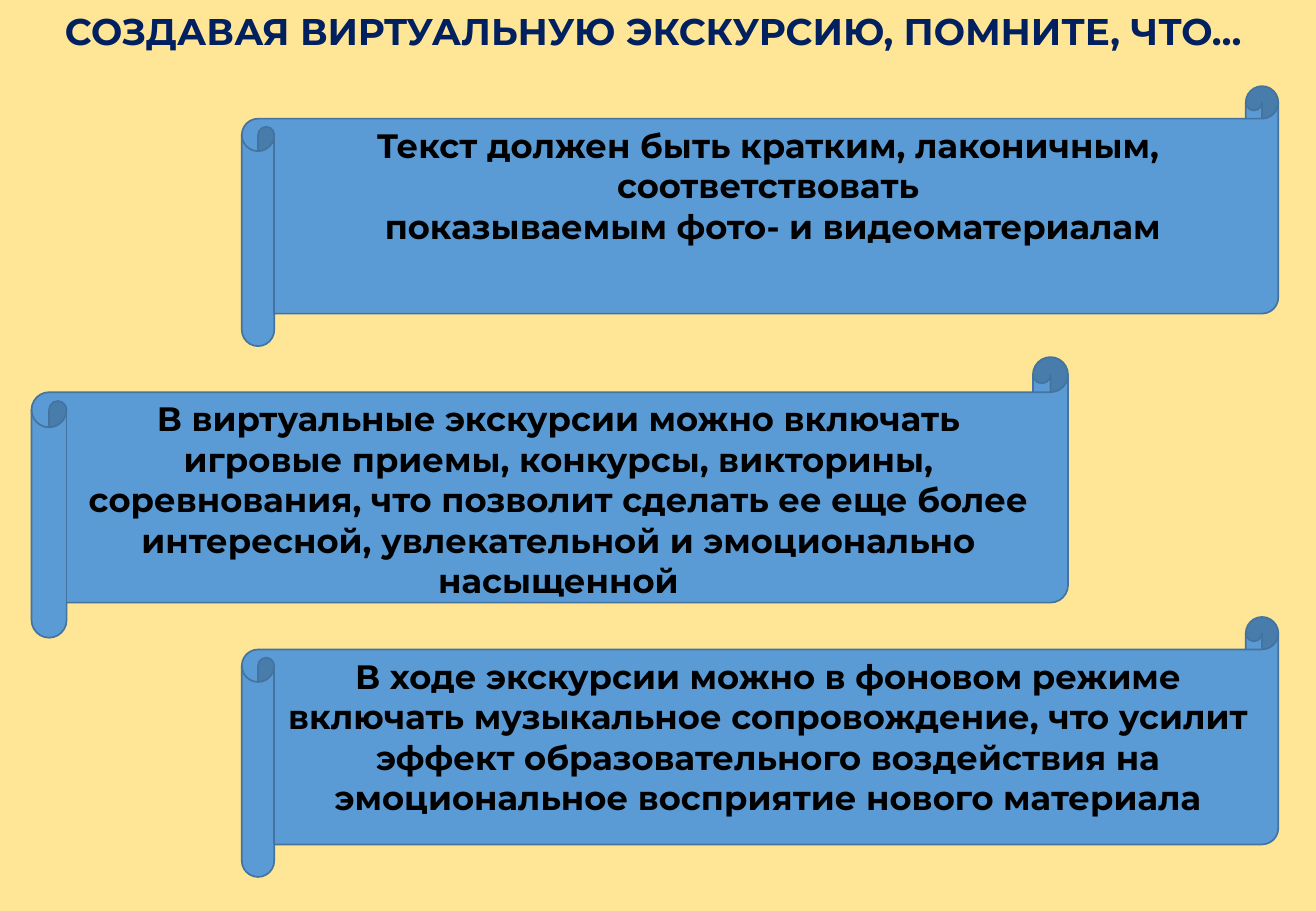
from pptx import Presentation
from pptx.dml.color import RGBColor
from pptx.enum.shapes import MSO_SHAPE
from pptx.enum.text import MSO_ANCHOR, MSO_AUTO_SIZE, PP_ALIGN
from pptx.util import Inches, Pt


def paint(color_format, hex_color):
    color_format.rgb = RGBColor.from_string(hex_color)


def write(shape, text, size, hex_color):
    frame = shape.text_frame
    frame.text = text
    frame.vertical_anchor = MSO_ANCHOR.TOP
    paragraph = frame.paragraphs[0]
    paragraph.alignment = PP_ALIGN.CENTER
    paragraph.font.name = "Montserrat"
    paragraph.font.size = Pt(size)
    paragraph.font.bold = True
    paint(paragraph.font.color, hex_color)


presentation = Presentation()
presentation.slide_width = Inches(10.83)
presentation.slide_height = Inches(7.5)
slide = presentation.slides.add_slide(presentation.slide_layouts[5])
slide.background.fill.solid()
paint(slide.background.fill.fore_color, "FFE596")

title = slide.shapes.title
title.left, title.top = Inches(0.13), Inches(0.02)
title.width, title.height = Inches(10.58), Inches(0.47)
write(title, "СОЗДАВАЯ ВИРТУАЛЬНУЮ ЭКСКУРСИЮ, ПОМНИТЕ, ЧТО… ", 22, "002060")
title.text_frame.word_wrap = False
title.text_frame.auto_size = MSO_AUTO_SIZE.SHAPE_TO_FIT_TEXT

scrolls = [
    (1.99, 0.71, 2.14, "Текст должен быть кратким, лаконичным, соответствовать\v"
     " показываемым фото- и видеоматериалам"),
    (0.26, 2.94, 2.31, "В виртуальные экскурсии можно включать игровые приемы, "
     "конкурсы, викторины, соревнования, что позволит сделать ее еще более "
     "интересной, увлекательной и эмоционально насыщенной"),
    (1.99, 5.08, 2.14, "В ходе экскурсии можно в фоновом режиме включать "
     "музыкальное сопровождение, что усилит эффект образовательного "
     "воздействия на эмоциональное восприятие нового материала"),
]
for left, top, height, text in scrolls:
    scroll = slide.shapes.add_shape(
        MSO_SHAPE.HORIZONTAL_SCROLL,
        Inches(left), Inches(top), Inches(8.53), Inches(height))
    scroll.shadow.inherit = False
    scroll.fill.solid()
    paint(scroll.fill.fore_color, "5B9BD5")
    paint(scroll.line.color, "43739E")
    scroll.line.width = Pt(1)
    write(scroll, text, 20, "000000")

presentation.save("out.pptx")
